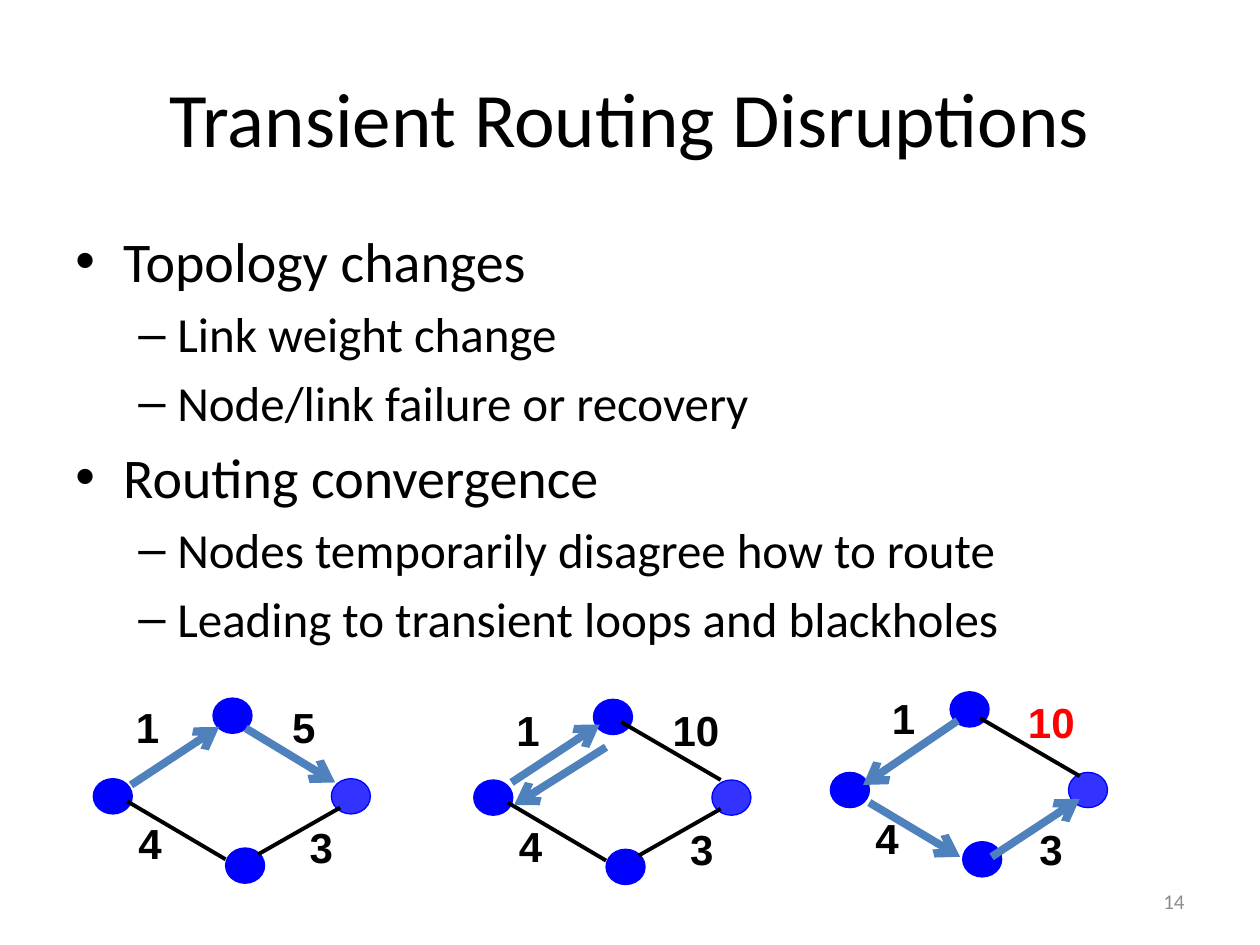
from lxml import etree
from pptx import Presentation
from pptx.dml.color import RGBColor
from pptx.enum.shapes import MSO_CONNECTOR, MSO_SHAPE
from pptx.enum.text import MSO_ANCHOR, MSO_AUTO_SIZE, PP_ALIGN
from pptx.oxml.ns import qn
from pptx.util import Inches, Pt

OVAL = MSO_SHAPE.OVAL
STRAIGHT = MSO_CONNECTOR.STRAIGHT
TOP, MIDDLE = MSO_ANCHOR.TOP, MSO_ANCHOR.MIDDLE
LEFT, CENTER, RIGHT = PP_ALIGN.LEFT, PP_ALIGN.CENTER, PP_ALIGN.RIGHT
FIT = MSO_AUTO_SIZE.SHAPE_TO_FIT_TEXT

COLORS = {
    "text": "000000",
    "number": "8C8C8C",
    "node": "0000FF",
    "target": "3333FF",
    "route": "4F81BD",
    "changed": "FF0000",
}

BULLETS = [
    (0, "Topology changes"),
    (1, "Link weight change"),
    (1, "Node/link failure or recovery"),
    (0, "Routing convergence"),
    (1, "Nodes temporarily disagree how to route"),
    (1, "Leading to transient loops and blackholes"),
]
LEVELS = [("•", 32, 0.38, -0.38), ("–", 28, 0.81, -0.31)]

NODES = [(0, 0.64, "node"), (0.95, 0, "node"),
         (1.89, 0.64, "target"), (1.05, 1.19, "node")]
LOWER_LINKS = [(0.27, 0.82, 1.05, 1.28), (1.31, 1.24, 1.96, 0.87)]

NETWORKS = [
    {
        "origin": (0.74, 5.54),
        "links": LOWER_LINKS,
        "routes": [(0.3, 0.69, 1, 0.23), (1.21, 0.24, 1.92, 0.67)],
        "weights": [("1", 0.24, -0.02, "text"), ("4", 0.26, 0.9, "text"),
                    ("5", 1.48, -0.02, "text"), ("3", 1.62, 0.93, "text")],
    },
    {
        "origin": (6.59, 5.49),
        "links": [(1.19, 0.21, 1.98, 0.67)],
        "routes": [(1.28, 1.31, 1.98, 0.85), (0.31, 0.88, 1.03, 1.31),
                   (1.01, 0.23, 0.26, 0.74)],
        "weights": [("1", 0.39, -0.04, "text"), ("4", 0.26, 0.91, "text"),
                    ("10", 1.47, -0.01, "changed"), ("3", 1.56, 1, "text")],
    },
    {
        "origin": (3.76, 5.55),
        "links": LOWER_LINKS + [(1.17, 0.18, 1.96, 0.64)],
        "routes": [(0.3, 0.66, 1, 0.2), (1.05, 0.38, 0.32, 0.84)],
        "weights": [("1", 0.24, -0.01, "text"), ("4", 0.26, 0.91, "text"),
                    ("10", 1.48, -0.01, "text"), ("3", 1.62, 0.94, "text")],
    },
]


class SlideBuilder:
    def __init__(self, slide):
        self.s = slide
        self.body_font = "Calibri"
        self.label_font = "Arial"

    def color(self, name):
        return RGBColor.from_string(COLORS[name])

    def style(self, p, size, font, color="text", bold=False):
        for r in p.runs:
            r.font.size = Pt(size)
            r.font.name = font
            r.font.bold = bold
            r.font.color.rgb = self.color(color)

    def text(self, box, text, size, align, color="text", anchor=MIDDLE):
        sp = self.s.shapes.add_textbox(*map(Inches, box))
        tf = sp.text_frame
        tf.word_wrap = True
        tf.vertical_anchor = anchor
        tf.text = text
        for p in tf.paragraphs:
            p.alignment = align
            self.style(p, size, self.body_font, color)
        return tf

    def bullets(self, box, items):
        text = "\n".join(item for level, item in items)
        tf = self.text(box, text, 32, LEFT, anchor=TOP)
        for p, (level, item) in zip(tf.paragraphs, items):
            mark, size, margin, indent = LEVELS[level]
            p.level = level
            p.space_before = Pt(size * 0.2)
            self.style(p, size, self.body_font)
            pPr = p._p.get_or_add_pPr()
            pPr.set("marL", str(Inches(margin)))
            pPr.set("indent", str(Inches(indent)))
            etree.SubElement(pPr, qn("a:buFont")).set("typeface", "Arial")
            etree.SubElement(pPr, qn("a:buChar")).set("char", mark)

    def node(self, group, x, y, color):
        sp = group.shapes.add_shape(OVAL, Inches(x), Inches(y), Inches(0.31), Inches(0.28))
        sp.shadow.inherit = False
        sp.fill.solid()
        sp.fill.fore_color.rgb = self.color(color)
        sp.line.color.rgb = self.color("node")
        sp.line.width = Pt(0.75)

    def link(self, group, ends, color="text", width=2.25, arrow=False):
        line = group.shapes.add_connector(STRAIGHT, *map(Inches, ends))
        line.line.color.rgb = self.color(color)
        line.line.width = Pt(width)
        if arrow:
            ln = line.line._get_or_add_ln()
            etree.SubElement(ln, qn("a:tailEnd")).set("type", "arrow")
        etree.SubElement(line._element.spPr, qn("a:effectLst"))

    def weight(self, group, text, x, y, color):
        width = 0.37 if len(text) == 1 else 0.58
        sp = group.shapes.add_textbox(Inches(x), Inches(y), Inches(width), Inches(0.5))
        tf = sp.text_frame
        tf.word_wrap = False
        tf.auto_size = FIT
        tf.text = text
        self.style(tf.paragraphs[0], 24, self.label_font, color, bold=True)

    def network(self, origin, links, routes, weights):
        left, top = origin
        group = self.s.shapes.add_group_shape()
        for x, y, color in NODES:
            self.node(group, left + x, top + y, color)
        for x1, y1, x2, y2 in links:
            self.link(group, (left + x1, top + y1, left + x2, top + y2))
        for x1, y1, x2, y2 in routes:
            self.link(group, (left + x1, top + y1, left + x2, top + y2), "route", 4.5, True)
        for text, x, y, color in weights:
            self.weight(group, text, left + x, top + y, color)


def main():
    prs = Presentation()
    prs.slide_width = Inches(10)
    prs.slide_height = Inches(7.5)
    builder = SlideBuilder(prs.slides.add_slide(prs.slide_layouts[6]))
    builder.text((0.5, 0.3, 9, 1.25), "Transient Routing Disruptions", 44, CENTER)
    builder.bullets((0.5, 1.75, 9, 3.74), BULLETS)
    builder.text((7.17, 6.95, 2.33, 0.4), "14", 12, RIGHT, "number")
    for network in NETWORKS:
        builder.network(**network)
    prs.save("out.pptx")


if __name__ == "__main__":
    main()
